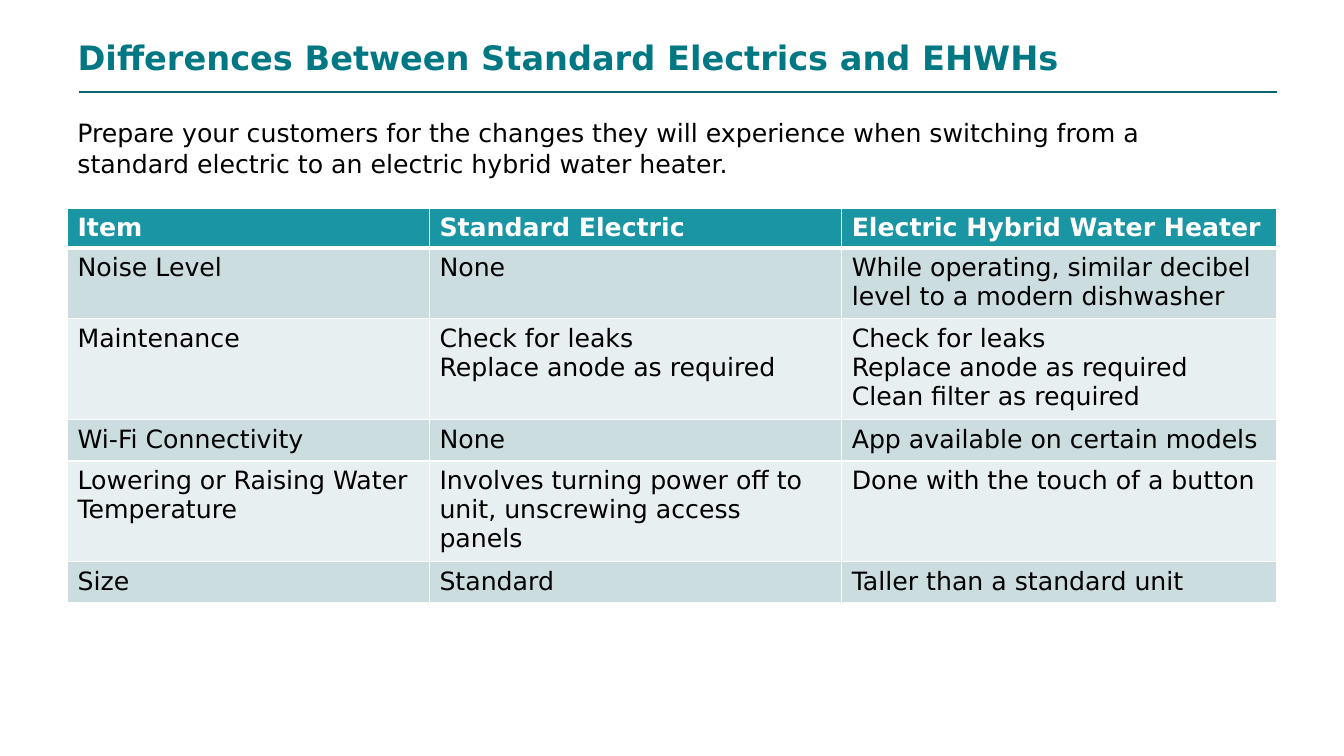
from lxml import etree
from pptx import Presentation
from pptx.dml.color import RGBColor
from pptx.enum import shapes, text
from pptx.oxml import ns
from pptx.util import Pt

COLORS = {
    "title": "007884",
    "rule": "0C6571",
    "header": "1995A3",
    "odd": "CCDDE0",
    "even": "E8EFF0",
    "white": "FFFFFF",
    "black": "000000",
}
FONT = "DejaVu Sans"
LEFT = 48.25

COLUMN_WIDTHS = [258.5, 294.5, 311]
ROW_HEIGHTS = [28, 49.5, 70, 29.5, 70, 29.5]
COMPARISON = [
    ["Item", "Standard Electric", "Electric Hybrid Water Heater"],
    ["Noise Level", "None", "While operating, similar decibel level to a modern dishwasher"],
    ["Maintenance", "Check for leaks\nReplace anode as required",
     "Check for leaks\nReplace anode as required\nClean filter as required"],
    ["Wi-Fi Connectivity", "None", "App available on certain models"],
    ["Lowering or Raising Water Temperature",
     "Involves turning power off to unit, unscrewing access panels",
     "Done with the touch of a button"],
    ["Size", "Standard", "Taller than a standard unit"],
]


def rgb(name):
    return RGBColor.from_string(COLORS[name])


def write(frame, content, color, size=18, bold=False):
    frame.text = content
    formats = {"name": FONT, "size": Pt(size), "bold": bold}
    for paragraph in frame.paragraphs:
        paragraph.alignment = text.PP_ALIGN.LEFT
        for key, value in formats.items():
            setattr(paragraph.font, key, value)
        paragraph.font.color.rgb = rgb(color)


def place(shape, left, top, width, height):
    box = {"left": left, "top": top, "width": width, "height": height}
    for key, value in box.items():
        setattr(shape, key, Pt(value))


def add_heading(slide, left, top, width, height):
    title = slide.shapes.title
    place(title, left, top, width, height)
    write(title.text_frame, "Differences Between Standard Electrics and EHWHs",
          "title", size=24, bold=True)
    title.text_frame.vertical_anchor = text.MSO_ANCHOR.MIDDLE
    title.text_frame.auto_size = text.MSO_AUTO_SIZE.NONE

    rule_top = top + height + 6.5
    rule = slide.shapes.add_connector(
        shapes.MSO_CONNECTOR.STRAIGHT,
        Pt(left + 8), Pt(rule_top), Pt(left + 864), Pt(rule_top))
    rule.line.color.rgb = rgb("rule")
    rule.line.width = Pt(1.5)
    etree.SubElement(rule._element.spPr, ns.qn("a:effectLst"))


def add_introduction(slide, left, top, width, height):
    introduction = slide.shapes.add_textbox(Pt(left), Pt(top), Pt(width), Pt(height))
    introduction.text_frame.word_wrap = True
    write(introduction.text_frame,
          "Prepare your customers for the changes they will experience when "
          "switching from a standard electric to an electric hybrid water heater.",
          "black")


def add_borders(cell, widths):
    properties = cell._tc.get_or_add_tcPr()
    for side, width in widths.items():
        border = etree.SubElement(properties, ns.qn(f"a:ln{side}"), w=str(Pt(width)))
        fill = etree.SubElement(border, ns.qn("a:solidFill"))
        etree.SubElement(fill, ns.qn("a:srgbClr"), val=COLORS["white"])


def add_comparison(slide, left, top):
    table = slide.shapes.add_table(
        len(ROW_HEIGHTS), len(COLUMN_WIDTHS), Pt(left), Pt(top),
        Pt(sum(COLUMN_WIDTHS)), Pt(sum(ROW_HEIGHTS))).table
    for column, width in zip(table.columns, COLUMN_WIDTHS):
        column.width = Pt(width)
    for index, (row, height) in enumerate(zip(table.rows, ROW_HEIGHTS)):
        row.height = Pt(height)
        is_header = index == 0
        background = "header" if is_header else "odd" if index % 2 else "even"
        borders = {"L": 1, "R": 1, "T": 3 if index == 1 else 1, "B": 3 if is_header else 1}
        for cell, content in zip(row.cells, COMPARISON[index]):
            write(cell.text_frame, content, "white" if is_header else "black", bold=is_header)
            add_borders(cell, borders)
            cell.fill.solid()
            cell.fill.fore_color.rgb = rgb(background)


def main():
    deck = Presentation()
    deck.slide_width, deck.slide_height = Pt(960), Pt(540)
    slide = deck.slides.add_slide(deck.slide_layouts[5])
    add_heading(slide, LEFT, 21.5, 760, 38)
    add_introduction(slide, LEFT, 80.5, 850, 51)
    add_comparison(slide, LEFT, 148.5)
    deck.save("out.pptx")


if __name__ == "__main__":
    main()
